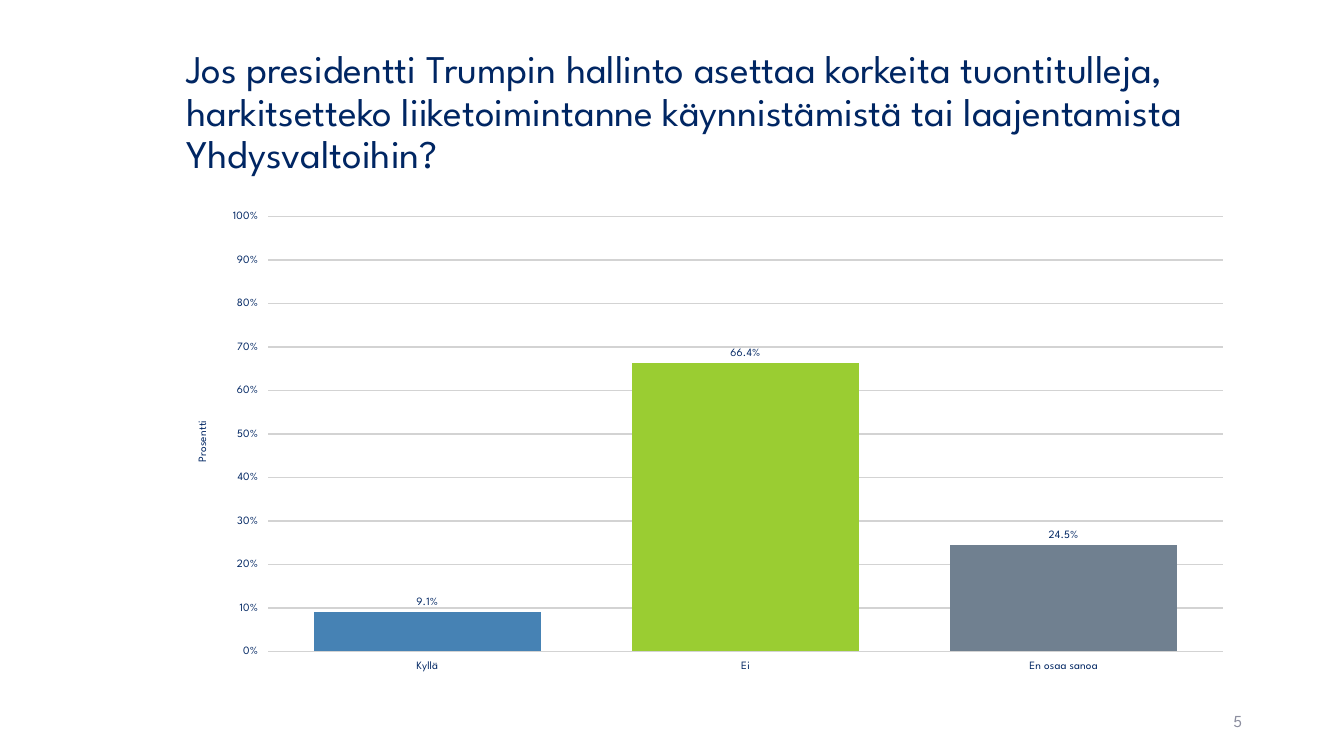
from dataclasses import dataclass

from pptx import Presentation
from pptx import util as u
from pptx.chart.data import CategoryChartData
from pptx.dml.color import RGBColor
from pptx.enum import chart as ch, text


@dataclass(frozen=True)
class Theme:
    font: str = "League Spartan"
    navy: str = "002663"
    muted: str = "8C8E9F"
    grid: str = "D3D3D3"
    title: int = 28
    number: int = 12
    chart: int = 18
    label: int = 8


THEME = Theme()
WIDTH, HEIGHT = 13.33, 7.5
LEFT, CONTENT_W = 1.75, 10.59
ANSWERS = [
    ("Kyllä", 0.091, "4682B4"),
    ("Ei", 0.664, "9ACD32"),
    ("En osaa sanoa", 0.245, "708090"),
]


def box(*lengths):
    return [u.Inches(length) for length in lengths]


def style(font, size, color=THEME.navy):
    font.name, font.size, font.bold = THEME.font, u.Pt(size), False
    font.color.rgb = RGBColor.from_string(color)


def add_text(s, at, content, size, color, align=text.PP_ALIGN.LEFT):
    tf = s.shapes.add_textbox(*box(*at)).text_frame
    tf.word_wrap = True
    tf.vertical_anchor = text.MSO_ANCHOR.MIDDLE
    p = tf.paragraphs[0]
    p.text, p.alignment = content, align
    style(p.font, size, color)
    return p


def style_axis(axis):
    axis.major_tick_mark = ch.XL_TICK_MARK.OUTSIDE
    axis.format.line.fill.background()
    style(axis.tick_labels.font, THEME.label)


def style_value_axis(axis, title):
    style_axis(axis)
    axis.minimum_scale, axis.maximum_scale, axis.major_unit = 0, 1, 0.1
    axis.tick_labels.number_format = "0%"
    axis.tick_labels.number_format_is_linked = False
    line = axis.major_gridlines.format.line
    line.width = u.Pt(1)
    line.color.rgb = RGBColor.from_string(THEME.grid)
    p = axis.axis_title.text_frame.paragraphs[0]
    p.text = title
    style(p.font, THEME.label)


def add_answer_chart(s, at):
    names, shares, colors = zip(*ANSWERS)
    data = CategoryChartData(number_format="0.0%")
    data.categories = names
    data.add_series("Series 1", shares)
    chart = s.shapes.add_chart(
        ch.XL_CHART_TYPE.COLUMN_CLUSTERED, *box(*at), data).chart
    chart.has_legend = chart.has_title = False
    style(chart.font, THEME.chart)
    style_axis(chart.category_axis)
    style_value_axis(chart.value_axis, "Prosentti")

    plot = chart.plots[0]
    plot.gap_width, plot.overlap, plot.vary_by_categories = 40, -2, False
    series = plot.series[0]
    for i, color in enumerate(colors):
        fill = series.points[i].format.fill
        fill.solid()
        fill.fore_color.rgb = RGBColor.from_string(color)
    labels = series.data_labels
    labels.show_value = True
    labels.number_format, labels.number_format_is_linked = "0.0%", False
    labels.position = ch.XL_LABEL_POSITION.OUTSIDE_END
    style(labels.font, THEME.label)


def main():
    prs = Presentation()
    prs.slide_width, prs.slide_height = box(WIDTH, HEIGHT)
    s = prs.slides.add_slide(prs.slide_layouts[6])
    title = add_text(
        s, (LEFT, 0.4, CONTENT_W, 1.45),
        "Jos presidentti Trumpin hallinto asettaa korkeita tuontitulleja, "
        "harkitsetteko liiketoimintanne käynnistämistä tai laajentamista "
        "Yhdysvaltoihin?", THEME.title, THEME.navy)
    title.line_spacing = 0.9
    add_answer_chart(s, (LEFT, 2, CONTENT_W, 4.76))
    number = add_text(s, (9.42, 6.95, 3, 0.4), "5", THEME.number,
                      THEME.muted, text.PP_ALIGN.RIGHT)
    number.space_after = u.Pt(6)
    prs.save("out.pptx")


if __name__ == "__main__":
    main()
